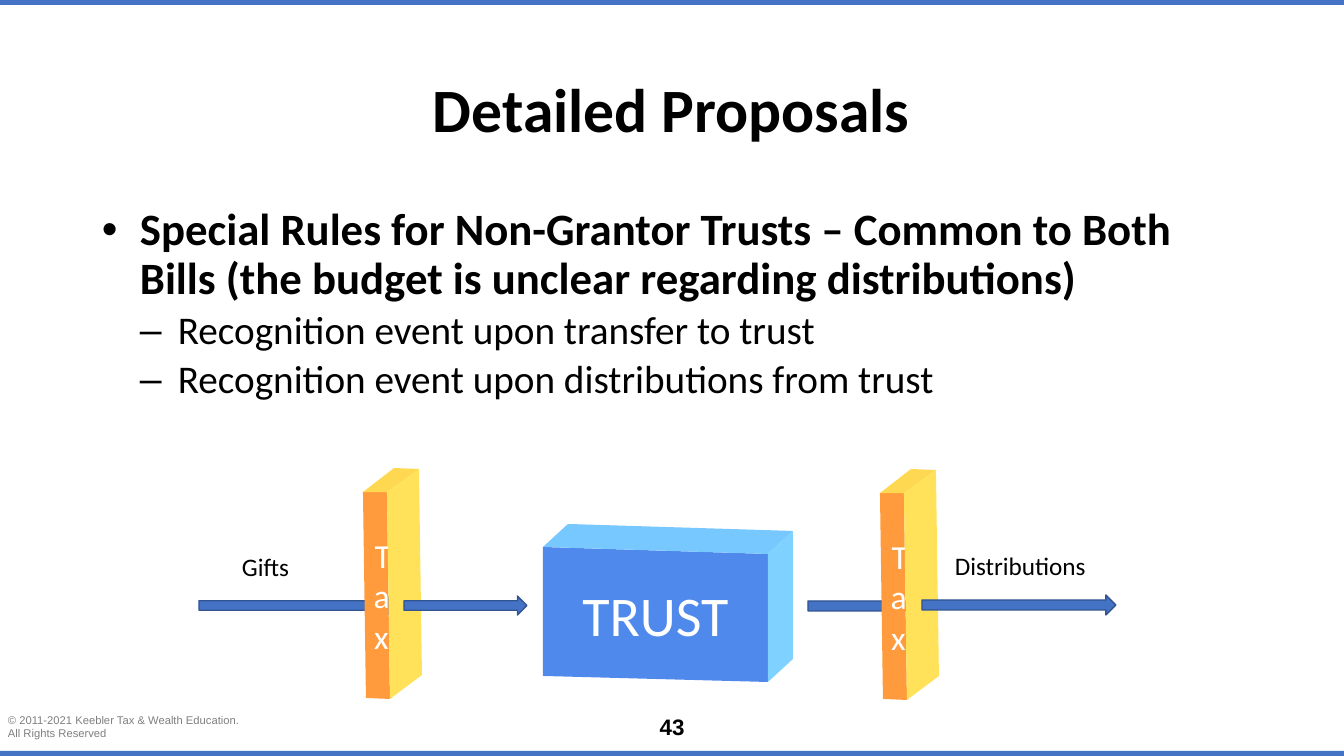
import pptx
import pptx.dml.color
import pptx.enum.shapes
import pptx.enum.text
import pptx.util
from lxml import etree

EMU_PER_PX = 914400 / 100.8
COLORS = {
    "blue": "4472C4", "outline": "325491", "black": "000000", "white": "FFFFFF",
    "gray": "7F7F7F", "trust_front": "5089EC", "trust_top": "76C8FF",
    "trust_side": "7FD2FF", "tax_front": "FF9B3D", "tax_top": "FFD851",
    "tax_side": "FFE25A",
}
SHAPES = pptx.enum.shapes.MSO_SHAPE
ANCHOR = pptx.enum.text.MSO_ANCHOR
ALIGN = pptx.enum.text.PP_ALIGN


def px(length):
    return pptx.util.Emu(round(length * EMU_PER_PX))


def rgb(name):
    return pptx.dml.color.RGBColor.from_string(COLORS[name])


def style_text(paragraph, size, color="black", bold=False, font="Calibri", align=ALIGN.LEFT):
    paragraph.alignment = align
    paragraph.font.size = pptx.util.Pt(size)
    paragraph.font.name = font
    paragraph.font.bold = bold
    paragraph.font.color.rgb = rgb(color)


def paint(shape, fill, line=None):
    shape.shadow.inherit = False
    shape.fill.solid()
    shape.fill.fore_color.rgb = rgb(fill)
    if line:
        shape.line.color.rgb = rgb(line)
        shape.line.width = pptx.util.Pt(1)
    else:
        shape.line.fill.background()


def add_box(slide, left, top, width, height, wrap=True):
    box = slide.shapes.add_textbox(px(left), px(top), px(width), px(height))
    box.text_frame.word_wrap = wrap
    return box.text_frame


def add_label(slide, bounds, lines, size, wrap=False, **style):
    frame = add_box(slide, *bounds, wrap=wrap)
    frame.text = "\n".join(lines)
    for paragraph in frame.paragraphs:
        style_text(paragraph, size, **style)
    return frame


def add_bullet(paragraph, text, mark, indent, size, bold):
    paragraph.text = text
    paragraph.line_spacing = 0.9
    properties = paragraph._p.get_or_add_pPr()
    properties.set("marL", str(px(indent)))
    properties.set("indent", str(-px(38)))
    bullet_font = etree.SubElement(properties, pptx.oxml.ns.qn("a:buFont"))
    bullet_font.set("typeface", "Arial")
    bullet = etree.SubElement(properties, pptx.oxml.ns.qn("a:buChar"))
    bullet.set("char", mark)
    style_text(paragraph, size, bold=bold)


def add_preset(slide, preset, bounds, line=None):
    shape = slide.shapes.add_shape(preset, *map(px, bounds))
    paint(shape, "blue", line)


def add_face(slide, points, color):
    builder = slide.shapes.build_freeform(*points[0], scale=EMU_PER_PX)
    builder.add_line_segments(points[1:], close=True)
    face = builder.convert_to_shape()
    paint(face, color)
    return face


def add_block(slide, kind, front, back, text, size, left_margin):
    top_left, top_right, bottom_right, _ = front
    back_left, back_right, back_bottom = back
    face = add_face(slide, front, kind + "_front")
    frame = face.text_frame
    frame.word_wrap = True
    frame.vertical_anchor = ANCHOR.MIDDLE
    frame.margin_left = px(left_margin)
    frame.margin_right = 0
    frame.text = text
    style_text(frame.paragraphs[0], size, "white", align=ALIGN.CENTER)
    add_face(slide, [top_left, back_left, back_right, top_right], kind + "_top")
    add_face(slide, [top_right, back_right, back_bottom, bottom_right], kind + "_side")


def add_tax_wall(slide, left, top):
    front = [(0, 24), (24, 24), (27, 231), (3, 230)]
    back = [(31, 0), (56, 1), (59, 207)]
    front, back = ([(left + x, top + y) for x, y in points] for points in (front, back))
    add_block(slide, "tax", front, back, "Tax", 24, 10)


def add_arrows(slide, arrows):
    for bounds in arrows:
        add_preset(slide, SHAPES.RIGHT_ARROW, bounds, "outline")


def add_frame(slide):
    add_label(slide, (-2, 708, 257, 37),
              ["© 2011-2021 Keebler Tax & Wealth Education.", "All Rights Reserved"],
              8, color="gray", font="Arial")
    add_label(slide, (634, 708, 76, 37), ["43"], 16, wrap=True, bold=True,
              font="Arial", align=ALIGN.CENTER)
    for top in (0, 751):
        add_preset(slide, SHAPES.RECTANGLE, (0, top, 1344, 5))


def add_proposals(slide):
    title = add_label(slide, (92, 40, 1159, 146), ["Detailed Proposals"], 44,
                      wrap=True, bold=True, align=ALIGN.CENTER)
    title.vertical_anchor = ANCHOR.MIDDLE
    title.paragraphs[0].line_spacing = 0.9
    rules = add_box(slide, 92, 202, 1159, 240)
    add_bullet(rules.paragraphs[0],
               "Special Rules for Non-Grantor Trusts – Common to Both Bills "
               "(the budget is unclear regarding distributions)", "•", 38, 32, True)
    for event in ("transfer to trust", "distributions from trust"):
        paragraph = rules.add_paragraph()
        paragraph.space_before = pptx.util.Pt(5)
        add_bullet(paragraph, "Recognition event upon " + event, "–", 76, 28, False)


def add_trust_flow(slide):
    add_arrows(slide, [(808, 596, 114, 20), (199, 596, 198, 19)])
    add_block(slide, "trust", [(543, 547), (768, 554), (768, 682), (543, 676)],
              [(568, 524), (793, 531), (793, 659)], "TRUST", 40, 0)
    add_label(slide, (232, 546, 68, 40), ["Gifts"], 18)
    add_label(slide, (945, 545, 152, 40), ["Distributions"], 18)
    add_tax_wall(slide, 363, 468)
    add_tax_wall(slide, 880, 469)
    add_arrows(slide, [(922, 595, 194, 20), (404, 596, 123, 19)])


def main():
    deck = pptx.Presentation()
    deck.slide_width = px(1344)
    deck.slide_height = px(756)
    slide = deck.slides.add_slide(deck.slide_layouts[6])
    add_frame(slide)
    add_proposals(slide)
    add_trust_flow(slide)
    deck.save("out.pptx")


if __name__ == "__main__":
    main()
